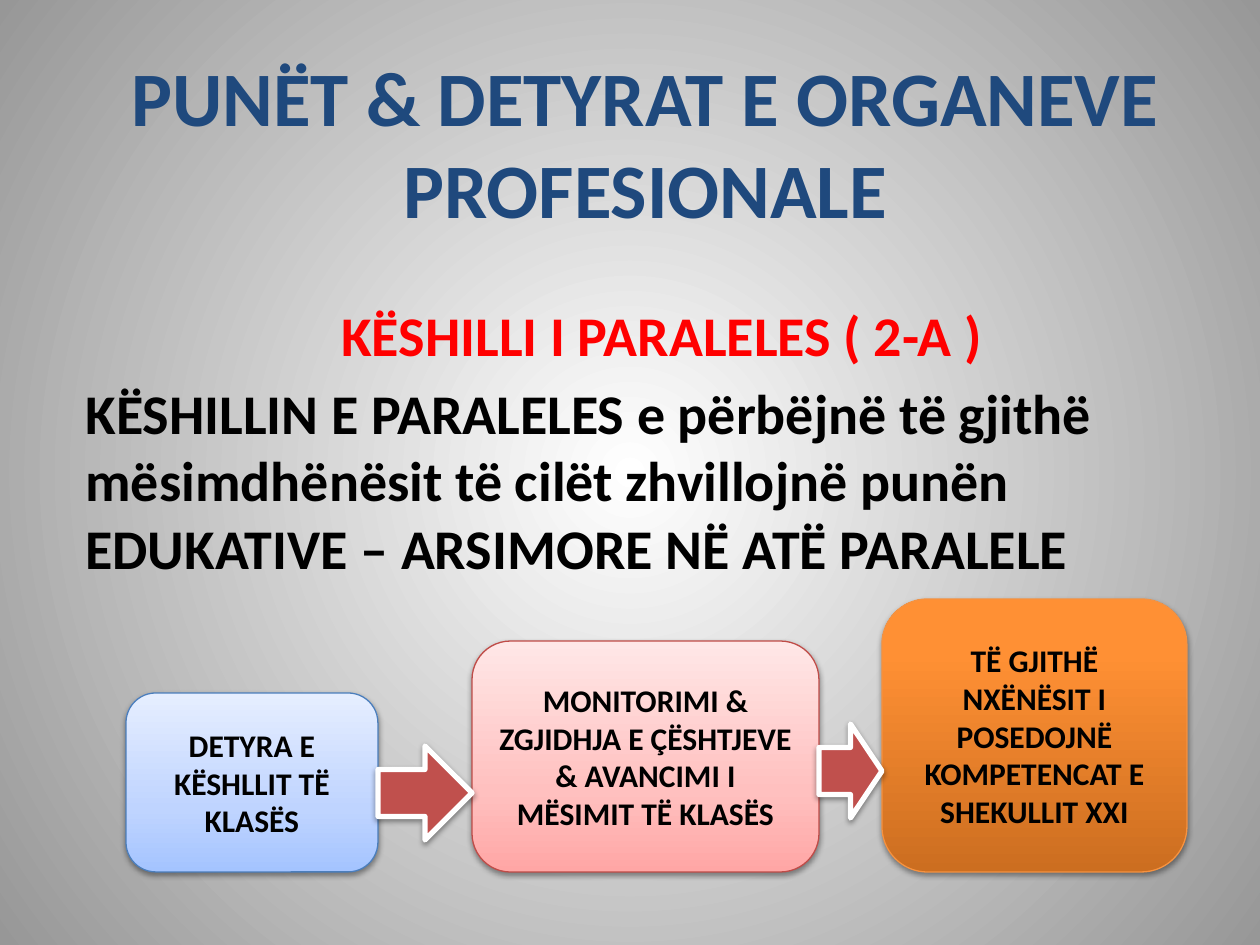
"""Builds the slide on the duties of the class council."""
from lxml import etree
from pptx import Presentation
from pptx.dml.color import RGBColor
from pptx.enum.shapes import MSO_SHAPE as Shape
from pptx.enum.text import MSO_ANCHOR as Anchor, PP_ALIGN as Align
from pptx.oxml import parse_xml
from pptx.oxml.ns import nsdecls, qn
from pptx.util import Pt

SCALE = 914400 / 126
BOTTOM = 872
rgb = RGBColor.from_string


def px(*lengths):
    return [round(length * SCALE) for length in lengths]


def set_gradient(parent, stops, direction):
    marks = "".join(
        f'<a:gs pos="{at * 1000}"><a:srgbClr val="{color}"/></a:gs>' for at, color in stops
    )
    gradient = f'<a:gradFill {nsdecls("a")}><a:gsLst>{marks}</a:gsLst>{direction}</a:gradFill>'
    parent.replace(parent.find(qn("a:solidFill")), parse_xml(gradient))


deck = Presentation()
deck.slide_width, deck.slide_height = px(1260, 945)
slide = deck.slides.add_slide(deck.slide_layouts[5])

slide.background.fill.solid()
set_gradient(
    slide.element.find(".//" + qn("p:bgPr")),
    [(0, "FFFFFF"), (100, "979797")],
    '<a:path path="circle"><a:fillToRect l="50000" t="50000" r="50000" b="50000"/></a:path>',
)

title = slide.shapes.title
title.left, title.top, title.width, title.height = px(94, 21, 1103, 242)
title.text_frame.text = "PUNËT & DETYRAT E ORGANEVE PROFESIONALE"
title.text_frame.vertical_anchor = Anchor.MIDDLE
heading = title.text_frame.paragraphs[0]
heading.alignment = Align.CENTER
heading.font.name, heading.font.size, heading.font.bold = "Calibri", Pt(44), True
heading.font.color.rgb = rgb("1F497D")

council = slide.shapes.add_textbox(*px(73, 294, 1178, 617)).text_frame
council.word_wrap = True
council.text = (
    "KËSHILLI I PARALELES ( 2-A )\n"
    "KËSHILLIN E PARALELES e përbëjnë të gjithë mësimdhënësit të cilët "
    "zhvillojnë punën EDUKATIVE – ARSIMORE NË ATË PARALELE"
)
for paragraph, color, align in zip(
    council.paragraphs, ("FF0000", "000000"), (Align.CENTER, Align.LEFT)
):
    paragraph.alignment = align
    paragraph.space_before = Pt(6.4)
    paragraph.font.name, paragraph.font.size, paragraph.font.bold = "Calibri", Pt(32), True
    paragraph.font.color.rgb = rgb(color)

steps = [
    (126, 252, 179, "DETYRA E KËSHLLIT TË KLASËS", "4B7EBC",
     [(0, "A4C4FF"), (35, "BFD4FF"), (100, "E6EEFF")]),
    (472, 347, 231, "MONITORIMI & ZGJIDHJA E ÇËSHTJEVE & AVANCIMI I MËSIMIT TË KLASËS", "BF4C48",
     [(0, "FFA6A5"), (35, "FFC0BF"), (100, "FFE7E7")]),
    (882, 305, 273, "TË GJITHË NXËNËSIT I POSEDOJNË KOMPETENCAT E SHEKULLIT XXI", "F69240",
     [(0, "CC6E20"), (80, "FF9034"), (100, "FF9136")]),
]
flow = []
for left, width, height, duty, outline, stops in steps:
    step = slide.shapes.add_shape(
        Shape.ROUNDED_RECTANGLE, *px(left, BOTTOM - height, width, height)
    )
    step.fill.solid()
    set_gradient(step.element.spPr, stops, '<a:lin ang="16200000" scaled="0"/>')
    step.line.color.rgb, step.line.width = rgb(outline), Pt(0.75)
    step.text_frame.word_wrap = True
    step.text_frame.vertical_anchor = Anchor.MIDDLE
    step.text_frame.text = duty
    label = step.text_frame.paragraphs[0]
    label.alignment = Align.CENTER
    label.font.name, label.font.size, label.font.bold = "Calibri", Pt(18), True
    label.font.color.rgb = rgb("000000")
    flow.append(step)

for (left, width, *_), following, top in zip(steps, steps[1:], (746, 724)):
    start = left + width
    arrow = slide.shapes.add_shape(
        Shape.RIGHT_ARROW, *px(start, top, following[0] - start, 94)
    )
    arrow.fill.solid()
    arrow.fill.fore_color.rgb = rgb("C0504D")
    arrow.line.color.rgb, arrow.line.width = rgb("FFFFFF"), Pt(3)
    flow.append(arrow)

for part in flow:
    part.shadow.inherit = False
    shadow = etree.SubElement(
        part.element.spPr.find(qn("a:effectLst")), qn("a:outerShdw"),
        blurRad="40000", dist="20000", dir="5400000", rotWithShape="0",
    )
    shade = etree.SubElement(shadow, qn("a:srgbClr"), val="000000")
    etree.SubElement(shade, qn("a:alpha"), val="38000")

deck.save("out.pptx")
